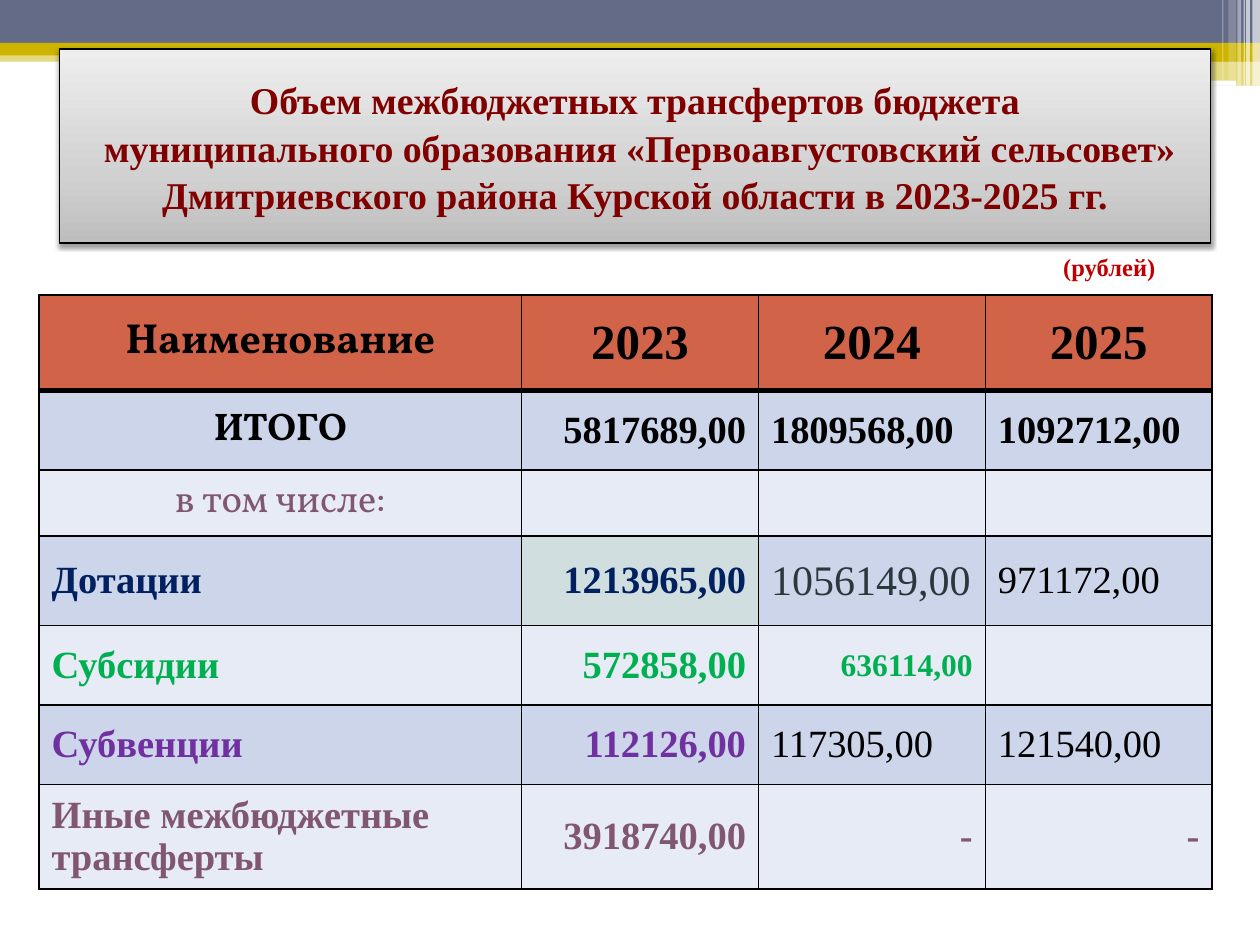
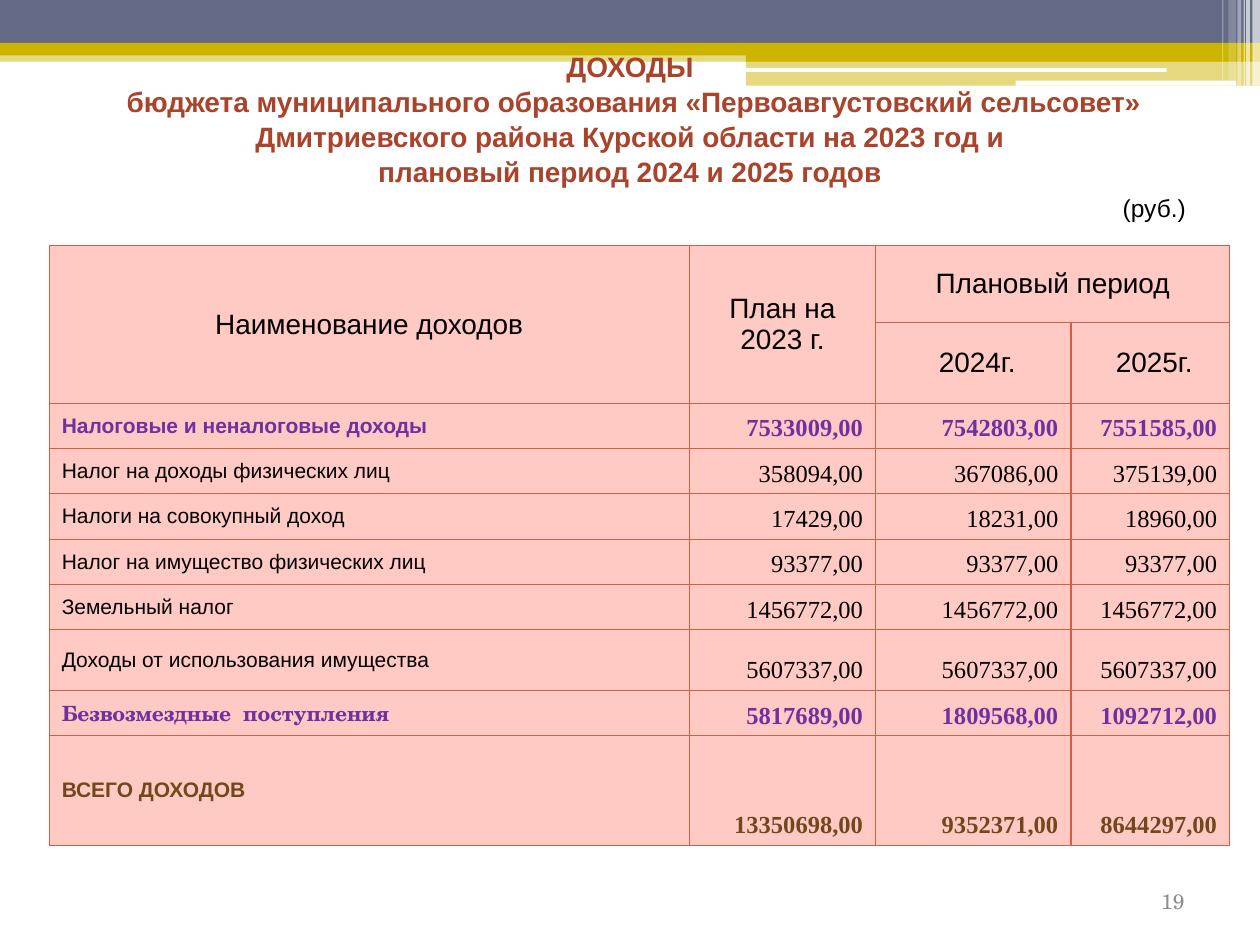
from lxml import etree
from pptx import Presentation
from pptx import util as u
from pptx.dml.color import RGBColor
from pptx.enum import shapes, text
from pptx.oxml.ns import qn

# Colours
WHITE, BLACK = RGBColor(255, 255, 255), RGBColor(0, 0, 0)
SLATE, GOLD = RGBColor(0x64, 0x6B, 0x86), RGBColor(0xCC, 0xB4, 0x00)
MAROON, RED = RGBColor(0x80, 0, 0), RGBColor(0xC0, 0, 0)
BRICK, RUST = RGBColor(0xA9, 0x43, 0x2B), RGBColor(0xD0, 0x5F, 0x44)
TERRACOTTA, PINK = RGBColor(0xD1, 0x63, 0x49), RGBColor(0xFF, 0xC9, 0xC4)
BLUE_TINT, PALE_TINT = RGBColor(0xCC, 0xD5, 0xEA), RGBColor(0xE7, 0xEB, 0xF5)
GREEN_TINT = RGBColor(0xD1, 0xDE, 0xDF)
MAUVE, NAVY = RGBColor(0x80, 0x56, 0x71), RGBColor(0, 0x20, 0x60)
GREEN, PURPLE = RGBColor(0, 0xB0, 0x50), RGBColor(0x70, 0x30, 0xA0)
CHARCOAL, BROWN = RGBColor(0x2A, 0x37, 0x3D), RGBColor(0x71, 0x48, 0x1C)
GREY = RGBColor(0x8C, 0x8C, 0x8C)

# Fonts and alignment
TIMES, ARIAL, VOLLKORN, SCHOLA = "Times New Roman", "Arial", "Vollkorn", "TeX Gyre Schola"
LEFT, CENTER, RIGHT = text.PP_ALIGN.LEFT, text.PP_ALIGN.CENTER, text.PP_ALIGN.RIGHT
TOP, MIDDLE, BOTTOM = text.MSO_ANCHOR.TOP, text.MSO_ANCHOR.MIDDLE, text.MSO_ANCHOR.BOTTOM

# Header bands: left, top, width, height, colour, opacity %, rounded
BANDS = [
    (0, 0.4, 10, 0.09, GOLD, 50, False),
    (0, 0, 10, 0.34, SLATE, 100, False),
    (0, 0.34, 10, 0.1, GOLD, 100, False),
    (5.92, 0.39, 4.08, 0.1, GOLD, 100, False),
    (5.92, 0.48, 4.08, 0.2, GOLD, 50, False),
    (5.91, 0.54, 3.35, 0.03, WHITE, 100, True),
    (8.06, 0.64, 1.75, 0.04, WHITE, 100, True),
    (9.94, 0, 0.06, 0.68, WHITE, 65, False),
    (9.89, 0, 0.03, 0.68, WHITE, 65, False),
    (9.87, 0, 0.01, 0.68, WHITE, 60, False),
    (9.82, 0, 0.03, 0.68, WHITE, 40, False),
    (9.75, 0, 0.06, 0.64, WHITE, 20, False),
    (9.7, 0, 0.01, 0.64, WHITE, 30, False),
]


def add(parent, tag, **attrs):
    return etree.SubElement(parent, qn(tag), {k: str(v) for k, v in attrs.items()})


def write(tf, content, font=TIMES, size=14, color=BLACK, bold=False, align=LEFT,
          anchor=MIDDLE, spacing=None):
    """Write one paragraph per line; \\v breaks a line inside a paragraph."""
    tf.word_wrap = True
    tf.vertical_anchor = anchor
    for i, line in enumerate(content.split("\n")):
        p = tf.add_paragraph() if i else tf.paragraphs[0]
        p.text = line
        p.alignment = align
        if spacing:
            p.line_spacing = spacing
        for f in [p.font] + [r.font for r in p.runs]:
            f.name, f.size, f.bold = font, u.Pt(size), bold
            f.color.rgb = color


class Deck:
    def __init__(self):
        self.prs = Presentation()
        self.prs.slide_width, self.prs.slide_height = u.Inches(10), u.Inches(7.5)
        self.s = None

    def slide(self):
        self.s = self.prs.slides.add_slide(self.prs.slide_layouts[6])
        self.s.background.fill.solid()
        self.s.background.fill.fore_color.rgb = WHITE
        for *at, color, opacity, rounded in BANDS:
            self.box(at, color, opacity, rounded)

    def box(self, at, color, opacity=100, rounded=False):
        kind = shapes.MSO_SHAPE.ROUNDED_RECTANGLE if rounded else shapes.MSO_SHAPE.RECTANGLE
        sp = self.s.shapes.add_shape(kind, *map(u.Inches, at))
        sp.shadow.inherit = False
        sp.line.fill.background()
        sp.fill.solid()
        sp.fill.fore_color.rgb = color
        if opacity < 100:
            add(sp.fill._xPr.find(".//" + qn("a:srgbClr")), "a:alpha", val=opacity * 1000)
        return sp

    def panel(self, at, stops, content, **fmt):
        """Outlined box with a bottom-to-top gradient and a soft shadow."""
        sp = self.box(at, WHITE)
        sp.line.color.rgb, sp.line.width = BLACK, u.Pt(0.75)
        spPr = sp._element.spPr
        solid = spPr.find(qn("a:solidFill"))
        grad = etree.Element(qn("a:gradFill"), rotWithShape="1")
        gs_list = add(grad, "a:gsLst")
        for pos, color in stops:
            add(add(gs_list, "a:gs", pos=pos * 1000), "a:srgbClr", val=color)
        add(grad, "a:lin", ang=270 * 60000, scaled=0)
        spPr.replace(solid, grad)
        shadow = add(spPr.find(qn("a:effectLst")), "a:outerShdw", blurRad=u.Pt(3.1),
                     dist=u.Pt(1.6), dir=90 * 60000, rotWithShape=0)
        add(add(shadow, "a:srgbClr", val=BLACK), "a:alpha", val=38000)
        write(sp.text_frame, content, **fmt)

    def label(self, at, content, **fmt):
        sp = self.s.shapes.add_textbox(*map(u.Inches, at))
        write(sp.text_frame, content, **fmt)

    def table(self, at, cols, rows, cells, color, width, merges=(), header_rule=None):
        """cells holds rows of (content, fill, format)."""
        frame = self.s.shapes.add_table(len(rows), len(cols), *map(u.Inches, at),
                                        u.Inches(sum(cols)), u.Inches(sum(rows)))
        tbl = frame.table
        for col, w in zip(tbl.columns, cols):
            col.width = u.Inches(w)
        for row, h in zip(tbl.rows, rows):
            row.height = u.Inches(h)
        for i, line in enumerate(cells):
            for j, (content, fill, fmt) in enumerate(line):
                cell = tbl.cell(i, j)
                widths = dict.fromkeys("LRTB", width)
                if header_rule and i < 2:
                    widths["T" if i else "B"] = header_rule
                self.borders(cell, color, widths)
                cell.fill.solid()
                cell.fill.fore_color.rgb = fill
                cell.vertical_anchor = fmt.get("anchor", MIDDLE)
                if content:
                    write(cell.text_frame, content, **fmt)
        for first, last in merges:
            tbl.cell(*first).merge(tbl.cell(*last))

    def borders(self, cell, color, widths):
        tcPr = cell._tc.get_or_add_tcPr()
        for side, w in widths.items():
            ln = add(tcPr, "a:ln" + side, w=u.Pt(w))
            add(add(ln, "a:solidFill"), "a:srgbClr", val=color)


def transfers(deck):
    deck.slide()

    # Table of transfers
    def head(content, font=TIMES, size=28):
        return content, TERRACOTTA, dict(font=font, size=size, bold=True, align=CENTER)

    def item(content, fill, color=BLACK, bold=True, align=LEFT, size=22, font=TIMES):
        return content, fill, dict(color=color, bold=bold, align=align, size=size, font=font)

    def blank(fill):
        return item("", fill)

    a, b = BLUE_TINT, PALE_TINT
    cells = [
        [head("Наименование", VOLLKORN, 24)] + [head(y) for y in ("2023", "2024", "2025")],
        [item("ИТОГО", a, align=CENTER, font=VOLLKORN), item("5817689,00", a, align=RIGHT),
         item("1809568,00", a), item("1092712,00", a)],
        [item("в том числе:", b, MAUVE, False, CENTER, font=VOLLKORN)] + [blank(b)] * 3,
        [item("Дотации", a, NAVY), item("1213965,00", GREEN_TINT, NAVY, align=RIGHT),
         item("1056149,00", a, CHARCOAL, False, size=24), item("971172,00", a, bold=False)],
        [item("Субсидии", b, GREEN), item("572858,00", b, GREEN, align=RIGHT),
         item("636114,00", b, GREEN, align=RIGHT, size=18), blank(b)],
        [item("Субвенции", a, PURPLE), item("112126,00", a, PURPLE, align=RIGHT),
         item("117305,00", a, bold=False), item("121540,00", a, bold=False)],
        [item("Иные межбюджетные трансферты", b, MAUVE)]
        + [item(v, b, MAUVE, align=RIGHT) for v in ("3918740,00", "-", "-")],
    ]
    deck.table((0.31, 2.34), [3.83, 1.88, 1.8, 1.8], [0.76, 0.63, 0.52, 0.71, 0.63, 0.63, 0.83],
               cells, BLACK, 1, header_rule=3)

    # Title and unit
    deck.panel((0.47, 0.39, 9.14, 1.54), [(0, "BDBDBD"), (35, "D1D1D1"), (100, "EEEEEE")],
               "Объем межбюджетных трансфертов бюджета\v муниципального образования "
               "«Первоавгустовский сельсовет» Дмитриевского района Курской области "
               "в 2023-2025 гг.",
               size=21.6, color=MAROON, bold=True, align=CENTER, spacing=1.05)
    deck.label((8.34, 1.95, 1.23, 0.33), "(рублей)", color=RED, bold=True)


def incomes(deck):
    deck.slide()

    # Page number, title and unit
    deck.label((7.17, 6.95, 2.33, 0.4), "19", font=SCHOLA, size=12, color=GREY, align=RIGHT)
    deck.label((0.31, 0.33, 9.38, 1.2),
               "ДОХОДЫ\n бюджета муниципального образования «Первоавгустовский сельсовет» "
               "Дмитриевского района Курской области на 2023 год и\n"
               "плановый период 2024 и 2025 годов",
               font=ARIAL, size=16, color=BRICK, bold=True, align=CENTER, anchor=TOP,
               spacing=1.05)
    deck.label((8.51, 1.48, 1, 0.33), "(руб.)", font=ARIAL, align=RIGHT)

    # Table of incomes
    def head(content):
        return content, PINK, dict(font=ARIAL, size=16, align=CENTER)

    def line(name, *values, color=BLACK, font=ARIAL):
        look = dict(color=color, bold=color != BLACK)
        return [(name, PINK, dict(font=font, size=12, **look))] + [
            (v, PINK, dict(align=RIGHT, anchor=BOTTOM, **look)) for v in values]

    cells = [
        [head(t) for t in ("Наименование доходов", "План на 2023 г.", "Плановый период", "")],
        [head(t) for t in ("", "", " 2024г.", " 2025г.")],
        line("Налоговые и неналоговые доходы", "7533009,00", "7542803,00", "7551585,00",
             color=PURPLE),
        line("Налог на доходы физических лиц", "358094,00", "367086,00", "375139,00"),
        line("Налоги на совокупный доход", "17429,00", "18231,00", "18960,00"),
        line("Налог на имущество физических лиц", *["93377,00"] * 3),
        line("Земельный налог", *["1456772,00"] * 3),
        line("Доходы от использования имущества", *["5607337,00"] * 3),
        line("Безвозмездные  поступления", "5817689,00", "1809568,00", "1092712,00",
             color=PURPLE, font=SCHOLA),
        line("ВСЕГО ДОХОДОВ", "13350698,00", "9352371,00", "8644297,00", color=BROWN),
    ]
    deck.table((0.39, 1.95), [5.08, 1.48, 1.55, 1.26],
               [0.61, 0.64] + [0.36] * 5 + [0.48, 0.36, 0.87], cells, RUST, 0.75,
               merges=[((0, 0), (1, 0)), ((0, 1), (1, 1)), ((0, 2), (0, 3))])


def main():
    deck = Deck()
    transfers(deck)
    incomes(deck)
    deck.prs.save("out.pptx")


if __name__ == "__main__":
    main()
